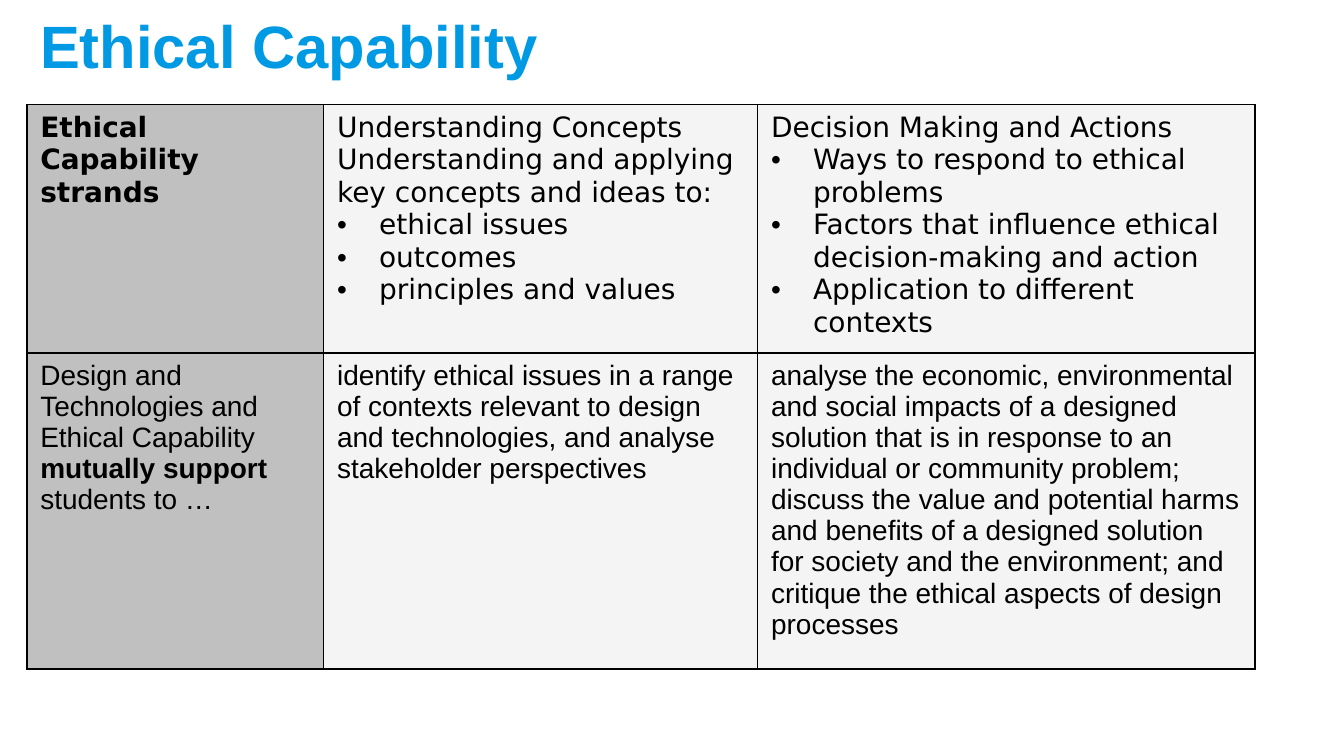
from dataclasses import dataclass

from lxml import etree
from pptx import Presentation
from pptx.dml.color import RGBColor
from pptx.enum.text import MSO_ANCHOR
from pptx.oxml.ns import qn
from pptx.util import Pt

MIDDLE = MSO_ANCHOR.MIDDLE


@dataclass(frozen=True)
class Theme:
    title_color: str = "0099E3"
    text_color: str = "000000"
    border_color: str = "000000"
    label_fill: str = "C0C0C0"
    body_fill: str = "F4F4F4"
    title_font: str = "Arial"
    strand_font: str = "DejaVu Sans"
    support_font: str = "Arial"
    title_size: float = 32
    body_size: float = 15


THEME = Theme()
BULLET = "•"
BULLET_INDENT = Pt(22.5)
COLUMN_WIDTHS = (159, 232.5, 266.5)
ROW_HEIGHTS = (124.5, 157.5)

# Each cell is a list of paragraphs; a paragraph is a list of (text, bold) runs.
# Paragraphs that start with the bullet sign become bulleted ones.
STRANDS = [
    [[("Ethical Capability strands", True)]],
    [
        [("Understanding Concepts", False)],
        [("Understanding and applying key concepts and ideas to:", False)],
        [(BULLET + "ethical issues", False)],
        [(BULLET + "outcomes", False)],
        [(BULLET + "principles and values", False)],
    ],
    [
        [("Decision Making and Actions", False)],
        [(BULLET + "Ways to respond to ethical problems", False)],
        [(BULLET + "Factors that influence ethical decision-making and action", False)],
        [(BULLET + "Application to different contexts", False)],
    ],
]
SUPPORT = [
    [[
        ("Design and Technologies and Ethical Capability ", False),
        ("mutually support ", True),
        ("students to …", False),
    ]],
    [[(
        "identify ethical issues in a range of contexts relevant to design "
        "and technologies, and analyse stakeholder perspectives", False,
    )]],
    [[(
        "analyse the economic, environmental and social impacts of a designed "
        "solution that is in response to an individual or community problem; "
        "discuss the value and potential harms and benefits of a designed "
        "solution for society and the environment; and critique the ethical "
        "aspects of design processes", False,
    )]],
]


def style_font(font, name, size, color):
    font.name = name
    font.size = Pt(size)
    font.color.rgb = RGBColor.from_string(color)


def add_title(slide, text):
    shape = slide.shapes.add_textbox(Pt(14.4), Pt(12.2), Pt(686), Pt(23.8))
    frame = shape.text_frame
    frame.word_wrap = True
    frame.vertical_anchor = MIDDLE
    paragraph = frame.paragraphs[0]
    paragraph.text = text
    style_font(paragraph.font, THEME.title_font, THEME.title_size, THEME.title_color)
    paragraph.font.bold = True


def add_bullet(paragraph):
    properties = paragraph._p.get_or_add_pPr()
    properties.set("marL", str(BULLET_INDENT))
    properties.set("indent", str(-BULLET_INDENT))
    etree.SubElement(properties, qn("a:buFont"), typeface="Arial")
    etree.SubElement(properties, qn("a:buChar"), char=BULLET)


def add_borders(cell):
    properties = cell._tc.get_or_add_tcPr()
    for side in ("lnL", "lnR", "lnT", "lnB"):
        line = etree.SubElement(properties, qn(f"a:{side}"), w=str(Pt(1)))
        fill = etree.SubElement(line, qn("a:solidFill"))
        etree.SubElement(fill, qn("a:srgbClr"), val=THEME.border_color)


def fill_paragraph(paragraph, runs, font_name):
    if runs[0][0].startswith(BULLET):
        add_bullet(paragraph)
    style_font(paragraph.font, font_name, THEME.body_size, THEME.text_color)
    if len(runs) == 1:
        paragraph.font.bold = runs[0][1]
    for text, bold in runs:
        run = paragraph.add_run()
        run.text = text.removeprefix(BULLET)
        if len(runs) > 1:
            run.font.bold = bold


def fill_cell(cell, paragraphs, font_name, color):
    add_borders(cell)
    cell.fill.solid()
    cell.fill.fore_color.rgb = RGBColor.from_string(color)
    frame = cell.text_frame
    for index, runs in enumerate(paragraphs):
        paragraph = frame.add_paragraph() if index else frame.paragraphs[0]
        fill_paragraph(paragraph, runs, font_name)


def add_capability_table(slide):
    table = slide.shapes.add_table(
        len(ROW_HEIGHTS), len(COLUMN_WIDTHS), Pt(14.4), Pt(56),
        Pt(sum(COLUMN_WIDTHS)), Pt(sum(ROW_HEIGHTS)),
    ).table
    table.first_row = False
    table.horz_banding = False
    for column, width in zip(table.columns, COLUMN_WIDTHS):
        column.width = Pt(width)
    for row, height in zip(table.rows, ROW_HEIGHTS):
        row.height = Pt(height)

    # The first column holds the row labels
    fonts = (THEME.strand_font, THEME.support_font)
    for row, contents, font_name in zip(table.rows, (STRANDS, SUPPORT), fonts):
        for index, (cell, paragraphs) in enumerate(zip(row.cells, contents)):
            color = THEME.body_fill if index else THEME.label_fill
            fill_cell(cell, paragraphs, font_name, color)


def main():
    presentation = Presentation()
    presentation.slide_width = Pt(720)
    presentation.slide_height = Pt(405)
    slide = presentation.slides.add_slide(presentation.slide_layouts[6])

    # Heading
    add_title(slide, "Ethical Capability")
    # Strands and what they support
    add_capability_table(slide)

    presentation.save("out.pptx")


if __name__ == "__main__":
    main()
